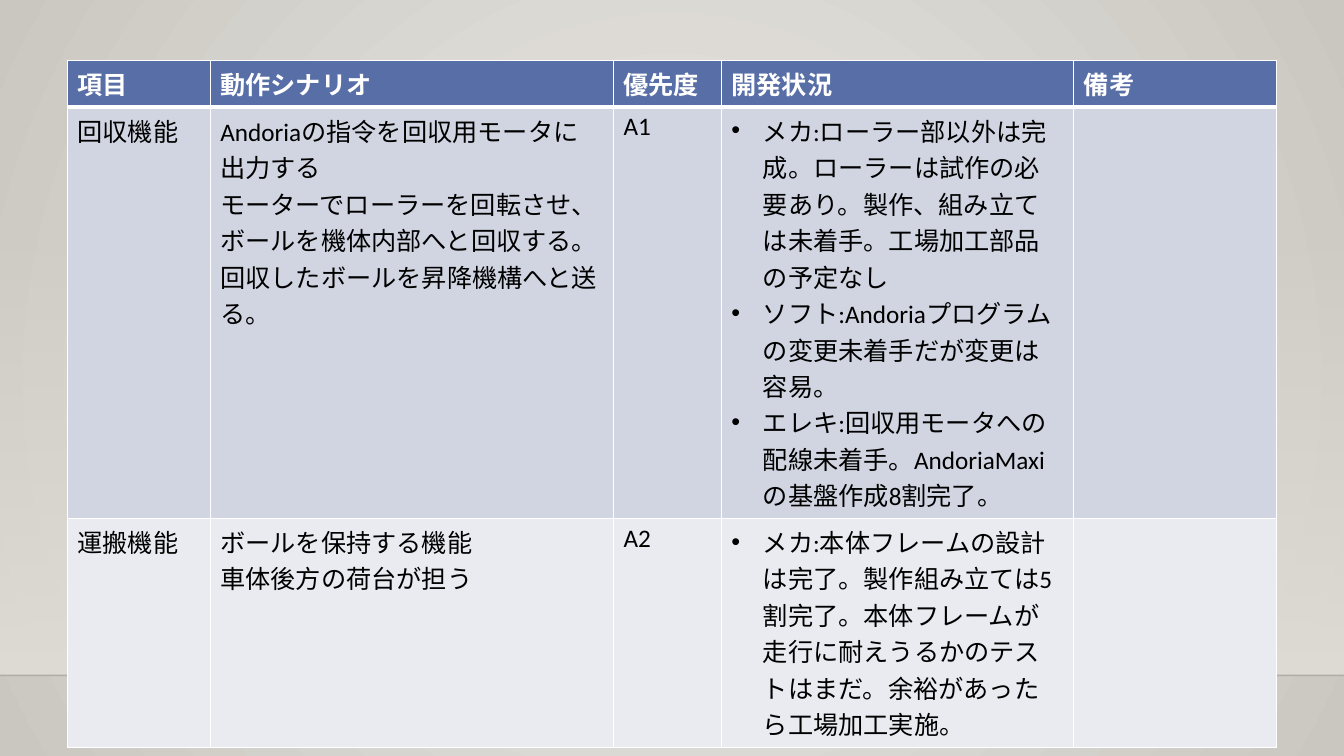
from lxml.etree import SubElement as Sub
from pptx import Presentation
from pptx.dml.color import RGBColor as RGB
from pptx.enum.shapes import MSO_CONNECTOR as Link, MSO_SHAPE as Shape
from pptx.oxml.ns import qn
from pptx.util import Cm, Pt

COLORS = {
    "glow": "ECEAE7", "edge": "CAC7C1", "floor": "DFDBD5", "rule": "000001",
    "head": "586EA6", "odd": "D1D5E1", "even": "EAEBF1",
    "white": "FFFFFF", "black": "000000",
}
FONT = "Calibri"
WIDE, HIGH = Cm(33.87), Cm(19.05)
HORIZON = Cm(17.02)
COLS = [3.6, 10.16, 2.72, 8.88, 5.11]
ROWS = [1.15, 10.3, 5.7]
STATUS = 3  # bulleted column

CELLS = [
    ["項目", "動作シナリオ", "優先度", "開発状況", "備考"],
    ["回収機能",
     "Andoriaの指令を回収用モータに出力する\n"
     "モーターでローラーを回転させ、ボールを機体内部へと回収する。"
     "回収したボールを昇降機構へと送る。",
     "A1",
     "メカ:ローラー部以外は完成。ローラーは試作の必要あり。"
     "製作、組み立ては未着手。工場加工部品の予定なし\n"
     "ソフト:Andoriaプログラムの変更未着手だが変更は容易。\n"
     "エレキ:回収用モータへの配線未着手。AndoriaMaxiの基盤作成8割完了。",
     ""],
    ["運搬機能",
     "ボールを保持する機能\n車体後方の荷台が担う",
     "A2",
     "メカ:本体フレームの設計は完了。製作組み立ては5割完了。"
     "本体フレームが走行に耐えうるかのテストはまだ。"
     "余裕があったら工場加工実施。",
     ""],
]


def color(name):
    return RGB.from_string(COLORS[name])


def blend(fill, first, last):
    fill.gradient()
    for stop, name, pos in zip(fill.gradient_stops, (first, last), (0, 1)):
        stop.color.rgb = color(name)
        stop.position = pos


def fade(node, share):
    """Set the opacity, in percent, of the first colour in node."""
    tint = next(node.iter(qn("a:srgbClr")))
    Sub(tint, qn("a:alpha"), val=str(share * 1000))


def add_back(slide):
    # Radial background
    back = slide.background.fill
    blend(back, "glow", "edge")
    grad = next(slide.element.iter(qn("a:gradFill")))
    grad.remove(grad.find(qn("a:lin")))
    ring = Sub(grad, qn("a:path"), path="circle")
    Sub(ring, qn("a:fillToRect"), dict.fromkeys("ltrb", "50000"))

    # Wall that fades in towards the horizon
    top = Cm(5.61)
    wall = slide.shapes.add_shape(Shape.RECTANGLE, 0, top, WIDE, HORIZON - top)
    wall.shadow.inherit = False
    wall.line.fill.background()
    blend(wall.fill, "floor", "floor")
    wall.fill.gradient_angle = 270
    fade(wall.element.spPr, 0)

    # Horizon line
    rule = slide.shapes.add_connector(Link.STRAIGHT, 0, HORIZON, WIDE, HORIZON)
    rule.line.width = Pt(1)
    rule.line.color.rgb = color("rule")
    props = rule.element.spPr
    fade(props, 20)
    Sub(props, qn("a:effectLst"))


def add_edge(cell, side, width):
    line = Sub(cell._tc.get_or_add_tcPr(), qn("a:ln" + side), w=str(Pt(width)))
    fill = Sub(line, qn("a:solidFill"))
    Sub(fill, qn("a:srgbClr"), val=COLORS["white"])


def add_dot(para):
    props = para._p.get_or_add_pPr()
    props.set("marL", str(Cm(0.79)))
    props.set("indent", str(Cm(-0.79)))
    Sub(props, qn("a:buFont"), typeface="Arial")
    Sub(props, qn("a:buChar"), char="•")


def fill_cell(cell, text, row, col):
    head = row == 0
    thick = {"T": 3 if row == 1 else 1, "B": 3 if head else 1}
    for side in "LRTB":
        add_edge(cell, side, thick.get(side, 1))
    cell.fill.solid()
    cell.fill.fore_color.rgb = color(("head", "odd", "even")[row])
    cell.text_frame.text = text
    for para in cell.text_frame.paragraphs:
        if col == STATUS and not head:
            add_dot(para)
        para.font.size = Pt(18)
        for run in para.runs:
            run.font.size = Pt(18)
            run.font.name = FONT
            run.font.bold = head
            run.font.color.rgb = color("white" if head else "black")


def add_grid(slide):
    table = slide.shapes.add_table(
        len(ROWS), len(COLS), Cm(1.7), Cm(1.52),
        Cm(sum(COLS)), Cm(sum(ROWS))).table
    for col, width in zip(table.columns, COLS):
        col.width = Cm(width)
    for row, height in zip(table.rows, ROWS):
        row.height = Cm(height)
    for r, texts in enumerate(CELLS):
        for c, text in enumerate(texts):
            fill_cell(table.cell(r, c), text, r, c)


def main():
    deck = Presentation()
    deck.slide_width, deck.slide_height = WIDE, HIGH
    slide = deck.slides.add_slide(deck.slide_layouts[6])
    add_back(slide)
    add_grid(slide)
    deck.save("out.pptx")


if __name__ == "__main__":
    main()
